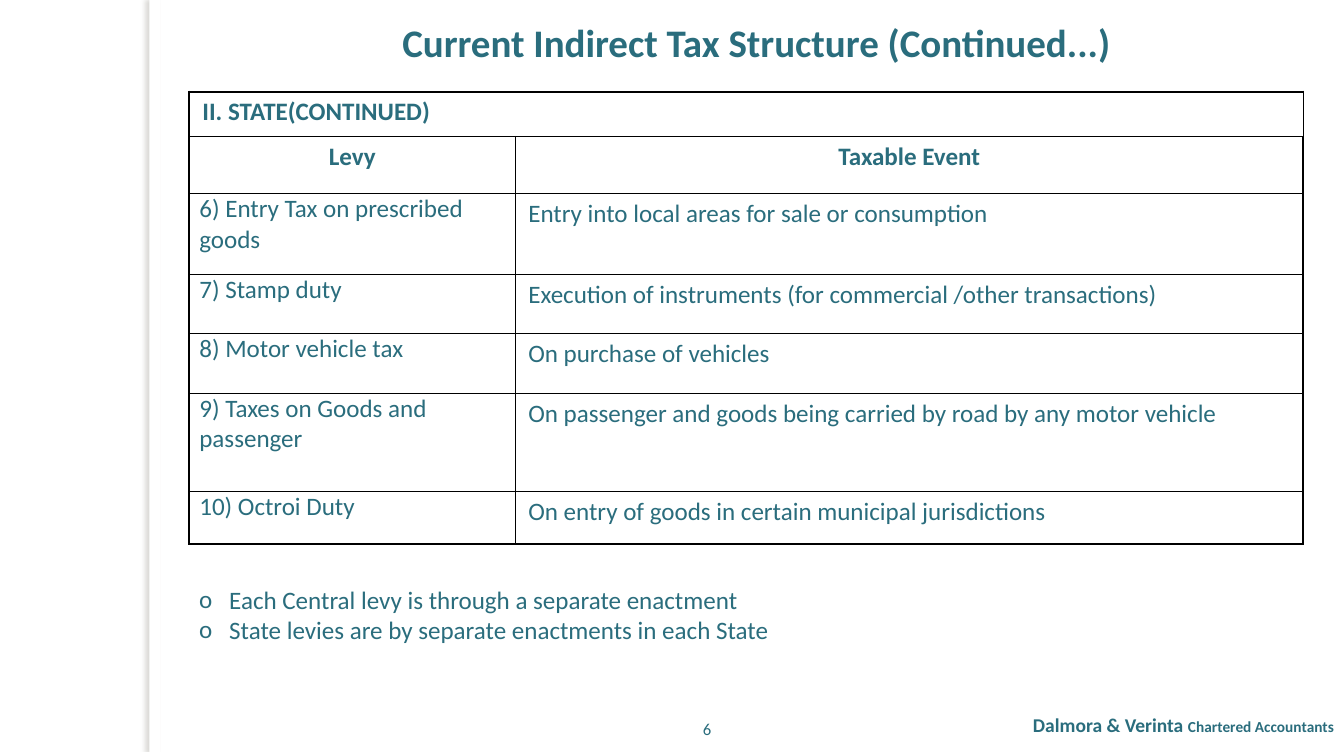
"""Build the slide on state indirect taxes."""
from dataclasses import dataclass

from lxml import etree
from pptx import Presentation
from pptx.dml.color import RGBColor
from pptx.enum.shapes import MSO_SHAPE
from pptx.enum.text import PP_ALIGN
from pptx.oxml.ns import qn
from pptx.util import Pt

RECTANGLE = MSO_SHAPE.RECTANGLE
LEFT, CENTER, RIGHT = PP_ALIGN.LEFT, PP_ALIGN.CENTER, PP_ALIGN.RIGHT


@dataclass(frozen=True)
class Theme:
    """Colours, font and type sizes of the slide."""

    teal: str = "2A6D7D"
    white: str = "FFFFFF"
    border: str = "000000"
    shadow: str = "736F63"
    font: str = "Calibri"
    title: int = 28
    body: int = 18
    firm: int = 14
    number: int = 12
    trade: int = 11


THEME = Theme()
SLIDE_WIDTH, SLIDE_HEIGHT = 965.5, 540
OUTER_LINE, INNER_LINE = 1.5, 1
BULLET_INDENT = 21.6
HEADING_INSETS = (9.36, 3.6)
LEVY_INSETS = (7.2, 0)
COLUMN_WIDTHS = (234.2, 566)
ROW_HEIGHTS = (32.3, 41, 58.2, 42.4, 42.9, 70.4, 37.5)
LEVIES = (
    ("6) Entry Tax on prescribed goods", "Entry into local areas for sale or consumption"),
    ("7) Stamp duty", "Execution of instruments (for commercial /other transactions)"),
    ("8) Motor vehicle tax", "On purchase of vehicles"),
    ("9) Taxes on Goods and passenger",
     "On passenger and goods being carried by road by any motor vehicle"),
    ("10) Octroi Duty", "On entry of goods in certain municipal jurisdictions"),
)
NOTES = (
    "Each Central levy is through a separate enactment",
    "State levies are by separate enactments in each State",
)


def add_element(parent, tag, **attributes):
    """Append a DrawingML element and return it."""
    return etree.SubElement(parent, qn(tag), attributes)


def write(paragraph, text, size=THEME.body, bold=False, align=LEFT):
    """Append formatted text to a paragraph."""
    paragraph.alignment = align
    run = paragraph.add_run()
    run.text = text
    run.font.name = THEME.font
    run.font.size = Pt(size)
    run.font.bold = bold
    run.font.color.rgb = RGBColor.from_string(THEME.teal)


def add_text_frame(slide, left, top, width, height):
    """Add a wrapping text box and return its text frame."""
    frame = slide.shapes.add_textbox(Pt(left), Pt(top), Pt(width), Pt(height)).text_frame
    frame.word_wrap = True
    return frame


def add_side_panel(slide):
    """Add the white strip that casts a soft shadow to the left."""
    panel = slide.shapes.add_shape(RECTANGLE, Pt(107.3), 0, Pt(7.9), Pt(SLIDE_HEIGHT))
    panel.fill.solid()
    panel.fill.fore_color.rgb = RGBColor.from_string(THEME.white)
    panel.line.fill.background()
    panel.shadow.inherit = False
    effects = panel.element.spPr.find(qn("a:effectLst"))
    shadow = add_element(effects, "a:outerShdw", blurRad=str(Pt(3)), dist=str(Pt(3)),
                         dir="10800000", algn="tl", rotWithShape="0")
    color = add_element(shadow, "a:srgbClr", val=THEME.shadow)
    add_element(color, "a:alpha", val="25000")


def draw_borders(cell, outer_sides):
    """Draw the four cell borders, heavier on the outer sides."""
    properties = cell._tc.get_or_add_tcPr()
    for side in "LRTB":
        width = OUTER_LINE if side in outer_sides else INNER_LINE
        line = add_element(properties, f"a:ln{side}", w=str(Pt(width)))
        add_element(add_element(line, "a:solidFill"), "a:srgbClr", val=THEME.border)


def fill_cell(cell, text, insets=HEADING_INSETS, **text_format):
    """Set the margins and the text of a cell."""
    cell.margin_left = cell.margin_right = Pt(insets[0])
    cell.margin_top = cell.margin_bottom = Pt(insets[1])
    write(cell.text_frame.paragraphs[0], text, **text_format)


def add_levy_table(slide):
    """Add the table of state levies and their taxable events."""
    rows, columns = len(ROW_HEIGHTS), len(COLUMN_WIDTHS)
    table = slide.shapes.add_table(rows, columns, Pt(136), Pt(65.8), Pt(sum(COLUMN_WIDTHS)),
                                   Pt(sum(ROW_HEIGHTS))).table
    table.first_row = table.horz_banding = False
    for column, width in zip(table.columns, COLUMN_WIDTHS):
        column.width = Pt(width)
    for r, height in enumerate(ROW_HEIGHTS):
        table.rows[r].height = Pt(height)
        for c in range(columns):
            edges = {"T": r == 0, "B": r == rows - 1, "L": c == 0, "R": c == columns - 1}
            cell = table.cell(r, c)
            draw_borders(cell, [side for side, is_outer in edges.items() if is_outer])
            cell.fill.background()
    table.cell(0, 0).merge(table.cell(0, 1))
    fill_cell(table.cell(0, 0), "II. STATE(CONTINUED)", bold=True)
    for c, heading in enumerate(("Levy", "Taxable Event")):
        fill_cell(table.cell(1, c), heading, bold=True, align=CENTER)
    for r, (levy, event) in enumerate(LEVIES, start=2):
        fill_cell(table.cell(r, 0), levy, insets=LEVY_INSETS)
        fill_cell(table.cell(r, 1), event)


def add_bullets(slide, items, *box):
    """Add a list with round letter bullets."""
    frame = add_text_frame(slide, *box)
    for i, item in enumerate(items):
        paragraph = frame.add_paragraph() if i else frame.paragraphs[0]
        write(paragraph, item)
        properties = paragraph._p.get_or_add_pPr()
        properties.set("marL", str(Pt(BULLET_INDENT)))
        properties.set("indent", str(-Pt(BULLET_INDENT)))
        add_element(add_element(properties, "a:buClr"), "a:srgbClr", val=THEME.teal)
        add_element(properties, "a:buFont", typeface=THEME.font)
        add_element(properties, "a:buChar", char="o")


def main():
    """Build and save the slide."""
    deck = Presentation()
    deck.slide_width, deck.slide_height = Pt(SLIDE_WIDTH), Pt(SLIDE_HEIGHT)
    slide = deck.slides.add_slide(deck.slide_layouts[6])
    add_side_panel(slide)
    add_levy_table(slide)

    title = add_text_frame(slide, 121, 9.4, 844.5, 41).paragraphs[0]
    write(title, "Current Indirect Tax Structure (Continued...)",
          size=THEME.title, bold=True, align=CENTER)
    add_bullets(slide, NOTES, 136, 416.2, 792, 51)

    firm = add_text_frame(slide, 482.7, 508.3, 482.7, 38.9).paragraphs[0]
    write(firm, "Dalmora & Verinta ", size=THEME.firm, bold=True, align=RIGHT)
    write(firm, "Chartered Accountants", size=THEME.trade, bold=True, align=RIGHT)
    page_number = add_text_frame(slide, 482.7, 512.6, 50.4, 21.6).paragraphs[0]
    write(page_number, "6", size=THEME.number, align=CENTER)
    deck.save("out.pptx")


if __name__ == "__main__":
    main()
